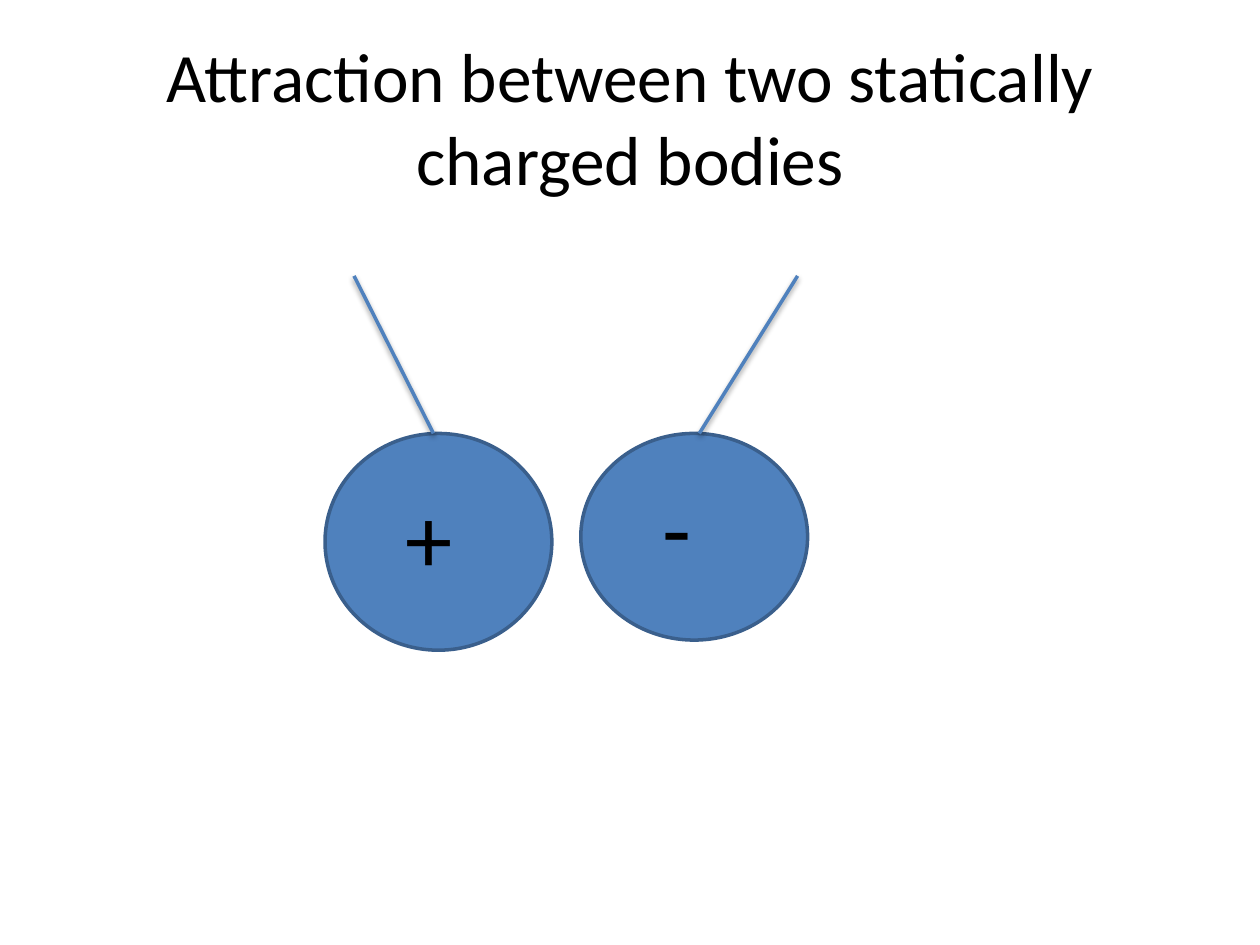
from typing import NamedTuple

from pptx import Presentation
from pptx.dml.color import RGBColor
from pptx.enum.shapes import MSO_CONNECTOR as Connector, MSO_SHAPE as Shape
from pptx.enum.text import MSO_ANCHOR as Anchor, PP_ALIGN as Align
from pptx.util import Pt

EMU_PER_PX = 9144  # 100 px to the inch
BLUE, DARK_BLUE, BLACK = "4F81BD", "3A5F8C", "000000"
LINE_WIDTH = Pt(2)


class Box(NamedTuple):
    left: int
    top: int
    width: int
    height: int


class Point(NamedTuple):
    x: int
    y: int


class ChargedBody(NamedTuple):
    ball: Box
    sign: str
    sign_box: Box
    string_end: Point
    string_top: Point


BODIES = [
    ChargedBody(Box(258, 344, 180, 172), "+", Box(312, 375, 133, 101),
                Point(344, 344), Point(281, 219)),
    ChargedBody(Box(461, 344, 180, 164), "-", Box(516, 367, 133, 101),
                Point(555, 344), Point(633, 219)),
]


def emu(lengths) -> list[int]:
    return [length * EMU_PER_PX for length in lengths]


def color(value: str) -> RGBColor:
    return RGBColor.from_string(value)


def set_line(shape, value: str) -> None:
    shape.line.color.rgb = color(value)
    shape.line.width = LINE_WIDTH


def add_text(page, box: Box, text: str, size: float,
             align=Align.LEFT, anchor=Anchor.TOP) -> None:
    frame = page.shapes.add_textbox(*emu(box)).text_frame
    frame.word_wrap = True
    frame.vertical_anchor = anchor
    para = frame.paragraphs[0]
    para.alignment = align
    span = para.add_run()
    span.text = text
    for name, value in {"name": "Calibri", "size": Pt(size)}.items():
        setattr(span.font, name, value)
    span.font.color.rgb = color(BLACK)


def add_ball(page, box: Box) -> None:
    ball = page.shapes.add_shape(Shape.OVAL, *emu(box))
    ball.shadow.inherit = False
    ball.fill.solid()
    ball.fill.fore_color.rgb = color(BLUE)
    set_line(ball, DARK_BLUE)


def add_string(page, start: Point, end: Point) -> None:
    """Draw a hanging string, which keeps the soft shadow of the theme."""
    string = page.shapes.add_connector(Connector.STRAIGHT, *emu(start + end))
    set_line(string, BLUE)


def main() -> None:
    deck = Presentation()
    deck.slide_width, deck.slide_height = emu((1000, 750))
    page = deck.slides.add_slide(deck.slide_layouts[6])
    add_text(page, Box(50, 30, 900, 125),
             "Attraction between two statically charged bodies",
             39.6, Align.CENTER, Anchor.MIDDLE)
    for body in BODIES:
        add_ball(page, body.ball)
        add_text(page, body.sign_box, body.sign, 54)
        add_string(page, body.string_end, body.string_top)
    deck.save("out.pptx")


if __name__ == "__main__":
    main()
